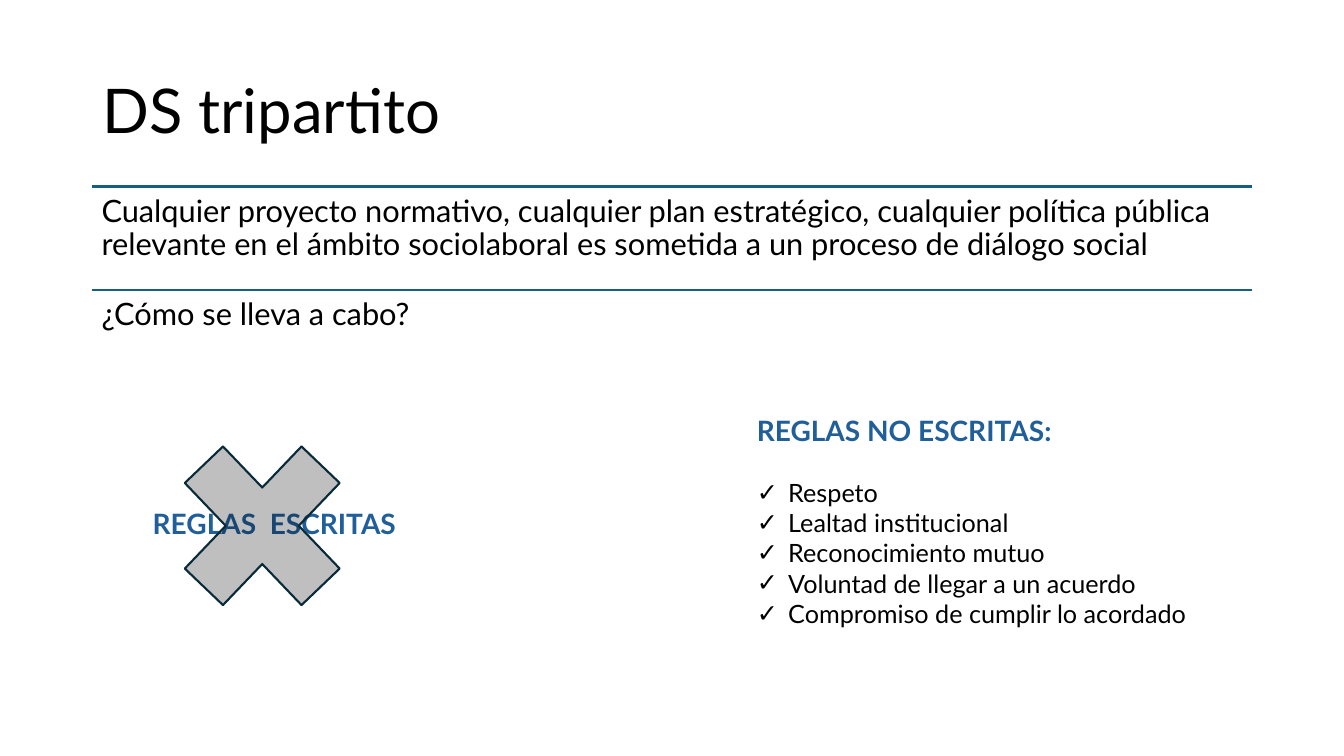
from dataclasses import dataclass

from lxml import etree
from pptx import Presentation
from pptx.dml.color import RGBColor
from pptx.enum.shapes import MSO_CONNECTOR, MSO_SHAPE
from pptx.enum.text import MSO_ANCHOR, MSO_AUTO_SIZE, PP_ALIGN
from pptx.oxml.ns import qn
from pptx.util import Cm, Pt

LEFT = PP_ALIGN.LEFT
TOP, MIDDLE = MSO_ANCHOR.TOP, MSO_ANCHOR.MIDDLE
NO_FIT = MSO_AUTO_SIZE.NONE
STRAIGHT = MSO_CONNECTOR.STRAIGHT
CROSS = MSO_SHAPE.MATH_MULTIPLY

TITLE = "DS tripartito"
STATEMENTS = [
    "Cualquier proyecto normativo, cualquier plan estratégico, cualquier política pública "
    "relevante en el ámbito sociolaboral es sometida a un proceso de diálogo social",
    "¿Cómo se lleva a cabo?",
]
WRITTEN_HEADING = "REGLAS  ESCRITAS"
UNWRITTEN_HEADING = "REGLAS NO ESCRITAS:"
UNWRITTEN_RULES = [
    "Respeto",
    "Lealtad institucional",
    "Reconocimiento mutuo",
    "Voluntad de llegar a un acuerdo",
    "Compromiso de cumplir lo acordado",
]


@dataclass(frozen=True)
class Theme:
    font: str = "Lato"
    ink: str = "000000"
    heading: str = "215F9A"
    rule: str = "156082"
    cross_line: str = "092A39"
    cross_opacity: int = 25
    title_size: float = 44
    statement_size: float = 22
    heading_size: float = 20
    item_size: float = 18
    line_width: float = 1.5


THEME = Theme()
MARGIN, CONTENT_WIDTH = 2.33, 29.21
STATEMENTS_TOP, STATEMENT_HEIGHT = 4.7, 2.6


def place(shape, left, top, width, height):
    shape.left, shape.top = Cm(left), Cm(top)
    shape.width, shape.height = Cm(width), Cm(height)


def prepare_frame(shape, anchor=TOP, inset=None):
    frame = shape.text_frame
    frame.word_wrap = True
    frame.auto_size = NO_FIT
    frame.vertical_anchor = anchor
    if inset is not None:
        frame.margin_left = frame.margin_right = Cm(inset)
        frame.margin_top = frame.margin_bottom = Cm(inset)
    return frame


def write(para, text, size, color=THEME.ink, bold=False, spacing=1.0,
          after=0, margin=0, indent=0, bullet=None):
    properties = para._p.get_or_add_pPr()
    properties.set("marL", str(Cm(margin)))
    properties.set("indent", str(Cm(indent)))
    if bullet:
        etree.SubElement(properties, qn("a:buChar")).set("char", bullet)
    else:
        etree.SubElement(properties, qn("a:buNone"))
    para.alignment = LEFT
    para.line_spacing = spacing
    para.space_before = Pt(0)
    para.space_after = Pt(after)
    span = para.add_run()
    span.text = text
    span.font.name = THEME.font
    span.font.size = Pt(size)
    span.font.bold = bold
    span.font.color.rgb = RGBColor.from_string(color)


def write_heading(para, text, after=0):
    write(para, text, THEME.heading_size, color=THEME.heading, bold=True,
          margin=1.27, after=after)


def add_text_box(page, left, top, width, height, inset=None):
    box = page.shapes.add_textbox(Cm(left), Cm(top), Cm(width), Cm(height))
    return prepare_frame(box, inset=inset).paragraphs[0]


def add_rule(page, top):
    rule = page.shapes.add_connector(
        STRAIGHT, Cm(MARGIN), Cm(top), Cm(MARGIN + CONTENT_WIDTH), Cm(top))
    rule.line.color.rgb = RGBColor.from_string(THEME.rule)
    rule.line.width = Pt(THEME.line_width)
    etree.SubElement(rule._element.spPr, qn("a:effectLst"))


def add_cross(page, left, top, width, height):
    cross = page.shapes.add_shape(CROSS, Cm(left), Cm(top), Cm(width), Cm(height))
    cross.shadow.inherit = False
    cross.fill.solid()
    cross.fill.fore_color.rgb = RGBColor.from_string(THEME.ink)
    color = cross._element.spPr.find(".//" + qn("a:srgbClr"))
    etree.SubElement(color, qn("a:alpha")).set("val", str(THEME.cross_opacity * 1000))
    cross.line.color.rgb = RGBColor.from_string(THEME.cross_line)
    cross.line.width = Pt(THEME.line_width)


def fill_unwritten_rules(body):
    place(body, 17.55, 10.29, 13.46, 5.74)
    frame = prepare_frame(body)
    write_heading(frame.paragraphs[0], UNWRITTEN_HEADING, after=THEME.item_size * 1.2)
    for rule in UNWRITTEN_RULES:
        write(frame.add_paragraph(), rule, THEME.item_size,
              margin=2.06, indent=-0.79, bullet="✓")


def main():
    deck = Presentation()
    deck.slide_width, deck.slide_height = Cm(33.87), Cm(19.05)
    page = deck.slides.add_slide(deck.slide_layouts[1])
    title, body = page.placeholders

    place(title, MARGIN, 1.02, CONTENT_WIDTH, 3.68)
    write(prepare_frame(title, anchor=MIDDLE).paragraphs[0], TITLE,
          THEME.title_size, spacing=0.9)

    for index, statement in enumerate(STATEMENTS):
        top = STATEMENTS_TOP + index * STATEMENT_HEIGHT
        add_rule(page, top)
        para = add_text_box(page, MARGIN, top, CONTENT_WIDTH, STATEMENT_HEIGHT, inset=0.23)
        write(para, statement, THEME.statement_size, spacing=0.9)

    fill_unwritten_rules(body)
    write_heading(add_text_box(page, MARGIN, 12.65, 10.16, 1.1), WRITTEN_HEADING)
    add_cross(page, 3.78, 10.29, 5.66, 5.92)
    deck.save("out.pptx")


if __name__ == "__main__":
    main()
